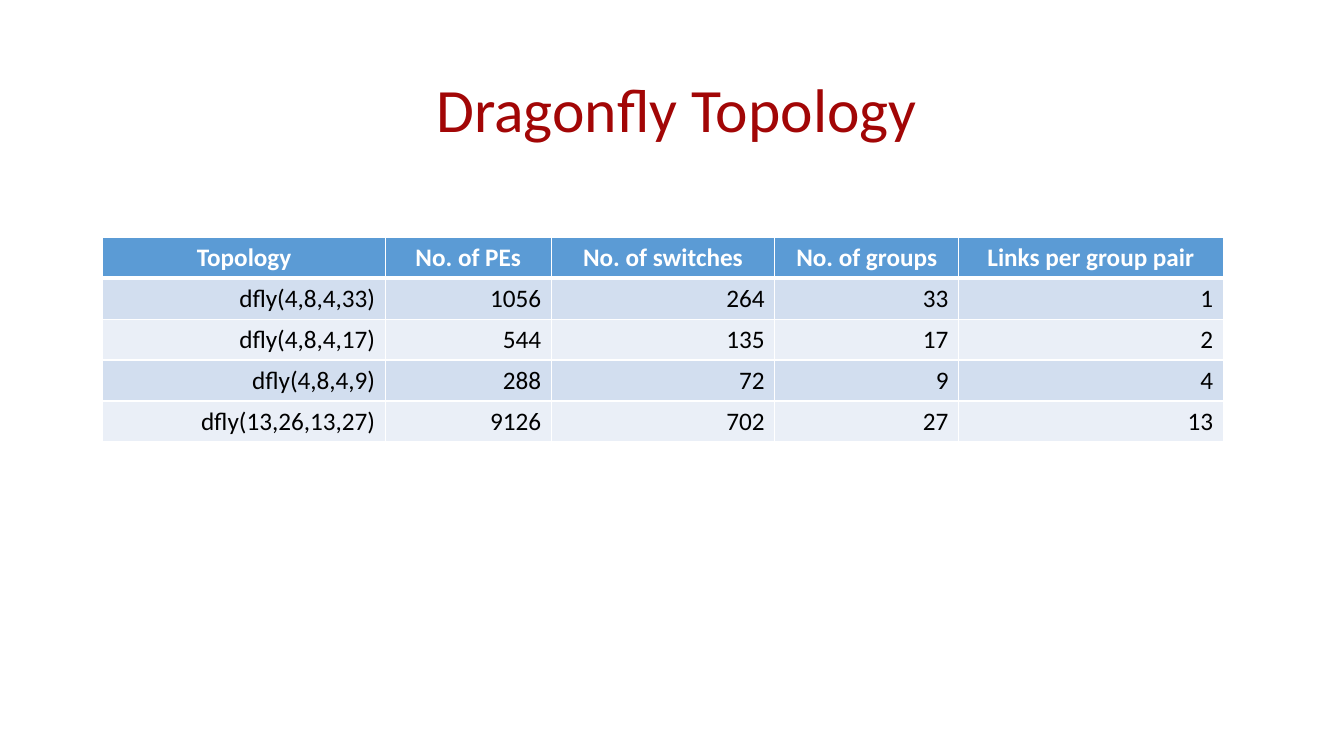
import lxml.etree
import pptx
import pptx.dml.color
import pptx.enum.text
import pptx.oxml.ns
import pptx.util

PX = 9525  # EMU per px, 96 px to the inch
FONT = "Calibri"
ALIGN = pptx.enum.text.PP_ALIGN

TITLE_BOX = (26, 38, 1237, 139)
TABLE_BOX = (98, 226, 1067, 195)
COLUMN_WIDTHS = (269, 158, 213, 175, 252)
ROWS = (
    ("Topology", "No. of PEs", "No. of switches", "No. of groups", "Links per group pair"),
    ("dfly(4,8,4,33)", "1056", "264", "33", "1"),
    ("dfly(4,8,4,17)", "544", "135", "17", "2"),
    ("dfly(4,8,4,9)", "288", "72", "9", "4"),
    ("dfly(13,26,13,27)", "9126", "702", "27", "13"),
)


def color(value):
    return pptx.dml.color.RGBColor.from_string(value)


def emu(box):
    return [pptx.util.Emu(length * PX) for length in box]


def add_text(paragraph, text, size, text_color, alignment, bold=False):
    paragraph.alignment = alignment
    run = paragraph.add_run()
    run.text = text
    run.font.name = FONT
    run.font.size = pptx.util.Pt(size)
    run.font.bold = bold
    run.font.color.rgb = color(text_color)


def add_borders(cell, bottom_width):
    properties = cell._tc.get_or_add_tcPr()
    qn = pptx.oxml.ns.qn
    for side, width in (("lnL", 1), ("lnR", 1), ("lnT", 1), ("lnB", bottom_width)):
        line = lxml.etree.SubElement(properties, qn("a:" + side), w=str(pptx.util.Pt(width)))
        fill = lxml.etree.SubElement(line, qn("a:solidFill"))
        lxml.etree.SubElement(fill, qn("a:srgbClr"), val="FFFFFF")


def add_title(slide, box, text):
    frame = slide.shapes.add_textbox(*emu(box)).text_frame
    frame.word_wrap = True
    frame.vertical_anchor = pptx.enum.text.MSO_ANCHOR.MIDDLE
    paragraph = frame.paragraphs[0]
    paragraph.line_spacing = 0.9
    add_text(paragraph, text, 44, "A20606", ALIGN.CENTER)


def add_topology_table(slide, box, rows, column_widths):
    table = slide.shapes.add_table(len(rows), len(column_widths), *emu(box)).table
    for column, width in zip(table.columns, column_widths):
        column.width = pptx.util.Emu(width * PX)

    for row_index, row in enumerate(rows):
        header = row_index == 0
        # Header row, then alternating bands
        fill = "5B9BD5" if header else ("EAEFF7", "D2DEEF")[row_index % 2]
        for column_index, text in enumerate(row):
            cell = table.cell(row_index, column_index)
            # A thick rule separates the header from the body
            add_borders(cell, 3 if header else 1)
            cell.fill.solid()
            cell.fill.fore_color.rgb = color(fill)
            add_text(
                cell.text_frame.paragraphs[0], text, 18,
                "FFFFFF" if header else "000000",
                ALIGN.CENTER if header else ALIGN.RIGHT,
                bold=header,
            )


def main():
    presentation = pptx.Presentation()
    presentation.slide_width, presentation.slide_height = emu((1280, 720))
    slide = presentation.slides.add_slide(presentation.slide_layouts[6])
    add_title(slide, TITLE_BOX, "Dragonfly Topology")
    add_topology_table(slide, TABLE_BOX, ROWS, COLUMN_WIDTHS)
    presentation.save("out.pptx")


if __name__ == "__main__":
    main()
